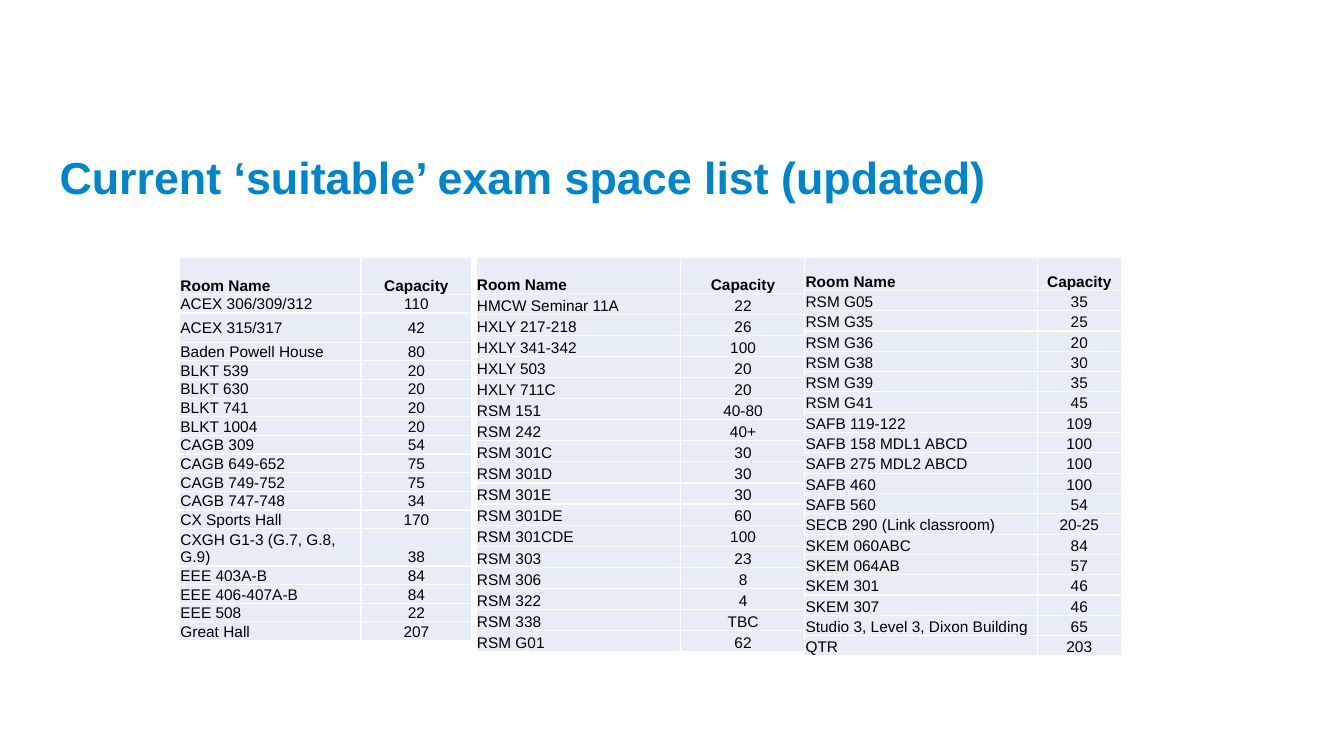
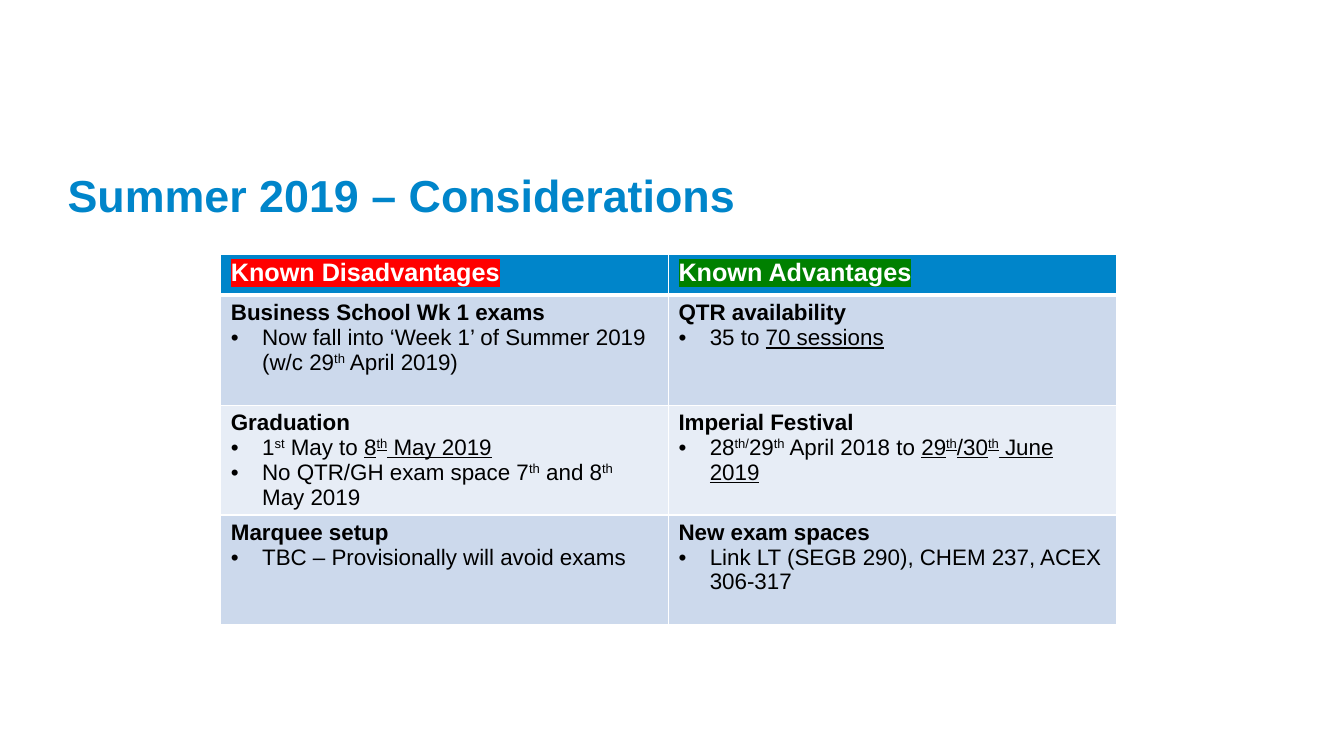
"""Build two slides on exam rooms and summer exam planning."""
from dataclasses import dataclass

from lxml.etree import SubElement
from pptx import Presentation
from pptx.dml.color import RGBColor
from pptx.enum.text import MSO_ANCHOR, MSO_AUTO_SIZE, PP_ALIGN
from pptx.oxml import parse_xml
from pptx.oxml.ns import nsdecls, qn
from pptx.util import Inches, Pt


@dataclass(frozen=True)
class Theme:
    """Hold the shared font, colours and type sizes."""
    font: str = "Arial"
    blue: str = "0085CA"
    pale: str = "E7EDF6"
    mid: str = "CCD9EC"
    white: str = "FFFFFF"
    black: str = "000000"
    red: str = "FF0000"
    green: str = "008000"
    title: int = 32
    head: int = 18
    body: int = 16
    small: int = 11


T = Theme()

HEAD = ("Room Name", "Capacity")
ROOMS = [
    dict(left=1.78, height=3.81, cols=(1.8, 1.1), fixed={0: 0.37, 2: 0.29, 13: 0.37},
         mid={1, 2}, rows=[
        ("ACEX 306/309/312", "110"), ("ACEX 315/317", "42"),
        ("Baden Powell House", "80"), ("BLKT 539", "20"),
        ("BLKT 630", "20"), ("BLKT 741", "20"),
        ("BLKT 1004", "20"), ("CAGB 309", "54"),
        ("CAGB 649-652", "75"), ("CAGB 749-752", "75"),
        ("CAGB 747-748", "34"), ("CX Sports Hall", "170"),
        ("CXGH G1-3 (G.7, G.8, G.9)", "38"), ("EEE 403A-B", "84"),
        ("EEE 406-407A-B", "84"), ("EEE 508", "22"), ("Great Hall", "207")]),
    dict(left=4.72, height=3.92, cols=(2.03, 1.24), fixed={0: 0.36}, mid=set(), rows=[
        ("HMCW Seminar 11A", "22"), ("HXLY 217-218", "26"),
        ("HXLY 341-342", "100"), ("HXLY 503", "20"),
        ("HXLY 711C", "20"), ("RSM 151", "40-80"),
        ("RSM 242", "40+"), ("RSM 301C", "30"),
        ("RSM 301D", "30"), ("RSM 301E", "30"),
        ("RSM 301DE", "60"), ("RSM 301CDE", "100"),
        ("RSM 303", "23"), ("RSM 306", "8"),
        ("RSM 322", "4"), ("RSM 338", "TBC"), ("RSM G01", "62")]),
    dict(left=7.98, height=3.96, cols=(2.31, 0.83), fixed={0: 0.33}, mid=set(), rows=[
        ("RSM G05", "35"), ("RSM G35", "25"),
        ("RSM G36", "20"), ("RSM G38", "30"),
        ("RSM G39", "35"), ("RSM G41", "45"),
        ("SAFB 119-122", "109"), ("SAFB 158 MDL1 ABCD", "100"),
        ("SAFB 275 MDL2 ABCD", "100"), ("SAFB 460", "100"),
        ("SAFB 560", "54"), ("SECB 290 (Link classroom)", "20-25"),
        ("SKEM 060ABC", "84"), ("SKEM 064AB", "57"),
        ("SKEM 301", "46"), ("SKEM 307", "46"),
        ("Studio 3, Level 3, Dixon Building", "65"), ("QTR", "203")]),
]

UP, LINE, BOTH = dict(up=True), dict(line=True), dict(up=True, line=True)
SIDES = [("Known Disadvantages", T.red), ("Known Advantages", T.green)]
POINTS = [
    [("Business School Wk 1 exams",
      [[("Now fall into ‘Week 1’ of Summer 2019 (w/c 29", {}), ("th", UP),
        (" April 2019)", {})]]),
     ("QTR availability", [[("35 to ", {}), ("70 sessions", LINE)]])],
    [("Graduation",
      [[("1", {}), ("st", UP), (" May to ", {}), ("8", LINE), ("th", BOTH),
        (" May 2019", LINE)],
       [("No QTR/GH exam space 7", {}), ("th", UP), (" and 8", {}), ("th", UP),
        (" May 2019", {})]]),
     ("Imperial Festival",
      [[("28", {}), ("th/", UP), ("29", {}), ("th", UP), (" April 2018 to ", {}),
        ("29", LINE), ("th", BOTH), ("/30", LINE), ("th", BOTH),
        (" June 2019", LINE)]])],
    [("Marquee setup", [[("TBC – Provisionally will avoid exams", {})]]),
     ("New exam spaces", [[("Link LT (SEGB 290), CHEM 237, ACEX 306-317", {})]])],
]


def add_run(para, text, size, color=T.black, bold=False, up=False, line=False, mark=None):
    """Add one styled run to a paragraph."""
    run = para.add_run()
    run.text = text
    font = run.font
    font.size, font.bold = Pt(size), bold
    font.color.rgb = RGBColor.from_string(color)
    props = run._r.get_or_add_rPr()
    if line:
        font.underline = True
    if up:
        props.set("baseline", "30000")
    if mark:
        light = SubElement(props, qn("a:highlight"))
        SubElement(light, qn("a:srgbClr")).set("val", mark)
    font.name = T.font


def add_slide(deck, text, left, top):
    """Add a title-only slide and format its title."""
    slide = deck.slides.add_slide(deck.slide_layouts[5])
    title = slide.shapes.title
    title.left, title.top = Inches(left), Inches(top)
    title.width, title.height = Inches(12), Inches(0.56)
    frame = title.text_frame
    frame.word_wrap, frame.auto_size = True, MSO_AUTO_SIZE.NONE
    frame.vertical_anchor = MSO_ANCHOR.MIDDLE
    frame.margin_left = frame.margin_right = frame.margin_bottom = 0
    frame.margin_top = Inches(0.05)
    para = frame.paragraphs[0]
    para.alignment = PP_ALIGN.LEFT
    add_run(para, text, T.title, T.blue, bold=True)
    return slide


def add_grid(slide, left, top, cols, rows):
    """Add a plain table with the given column widths and row heights."""
    frame = slide.shapes.add_table(len(rows), len(cols), Inches(left), Inches(top),
                                   Inches(sum(cols)), Inches(sum(rows)))
    grid = frame.table
    grid.first_row = grid.horz_banding = False
    for col, width in zip(grid.columns, cols):
        col.width = Inches(width)
    for row, height in zip(grid.rows, rows):
        row.height = Inches(height)
    return grid


def paint(cell, fill, top=1, base=1):
    """Fill a cell and draw its white borders."""
    cell.fill.solid()
    cell.fill.fore_color.rgb = RGBColor.from_string(fill)
    props = cell._tc.get_or_add_tcPr()
    for spot, (side, width) in enumerate(zip("LRTB", (1, 1, top, base))):
        props.insert(spot, parse_xml(
            f'<a:ln{side} {nsdecls("a")} w="{Pt(width)}"><a:solidFill>'
            f'<a:srgbClr val="{T.white}"/></a:solidFill></a:ln{side}>'))


def add_rooms(slide, left, height, cols, fixed, mid, rows):
    """Add one room table, sharing spare height among its plain rows."""
    lines = [HEAD, *rows]
    step = (height - sum(fixed.values())) / (len(lines) - len(fixed))
    sizes = [fixed.get(i, step) for i in range(len(lines))]
    grid = add_grid(slide, left, 2.55, cols, sizes)
    for i, line in enumerate(lines):
        for j, text in enumerate(line):
            cell = grid.cell(i, j)
            paint(cell, T.pale)
            cell.margin_left = cell.margin_right = cell.margin_top = Inches(0.01)
            cell.margin_bottom = 0
            cell.vertical_anchor = MSO_ANCHOR.MIDDLE if i in mid else MSO_ANCHOR.BOTTOM
            para = cell.text_frame.paragraphs[0]
            para.alignment = PP_ALIGN.CENTER if j else PP_ALIGN.LEFT
            add_run(para, text, T.small, bold=i == 0)


def add_bullet(frame, runs):
    """Add a bulleted paragraph made of styled runs."""
    para = frame.add_paragraph()
    props = para._p.get_or_add_pPr()
    props.set("marL", str(Inches(0.31)))
    props.set("indent", str(-Inches(0.31)))
    SubElement(props, qn("a:buFont")).set("typeface", T.font)
    SubElement(props, qn("a:buChar")).set("char", "•")
    for text, style in runs:
        add_run(para, text, T.body, **style)


def add_points(slide):
    """Add the table that weighs disadvantages against advantages."""
    grid = add_grid(slide, 2.19, 2.52, [4.44] * 2, [0.41] + [1.09] * len(POINTS))
    for j, (text, mark) in enumerate(SIDES):
        cell = grid.cell(0, j)
        paint(cell, T.blue, base=3)
        add_run(cell.text_frame.paragraphs[0], text, T.head, T.white, bold=True, mark=mark)
    for i, row in enumerate(POINTS, 1):
        for j, (head, items) in enumerate(row):
            cell = grid.cell(i, j)
            paint(cell, T.mid if i % 2 else T.pale, top=3 if i == 1 else 1)
            frame = cell.text_frame
            add_run(frame.paragraphs[0], head, T.body, bold=True)
            for runs in items:
                add_bullet(frame, runs)


def main():
    """Build and save the deck."""
    deck = Presentation()
    deck.slide_width, deck.slide_height = Inches(13.33), Inches(7.5)
    slide = add_slide(deck, "Current ‘suitable’ exam space list (updated)", 0.59, 1.45)
    for block in ROOMS:
        add_rooms(slide, **block)
    add_points(add_slide(deck, "Summer 2019 – Considerations", 0.67, 1.63))
    deck.save("out.pptx")


if __name__ == "__main__":
    main()
